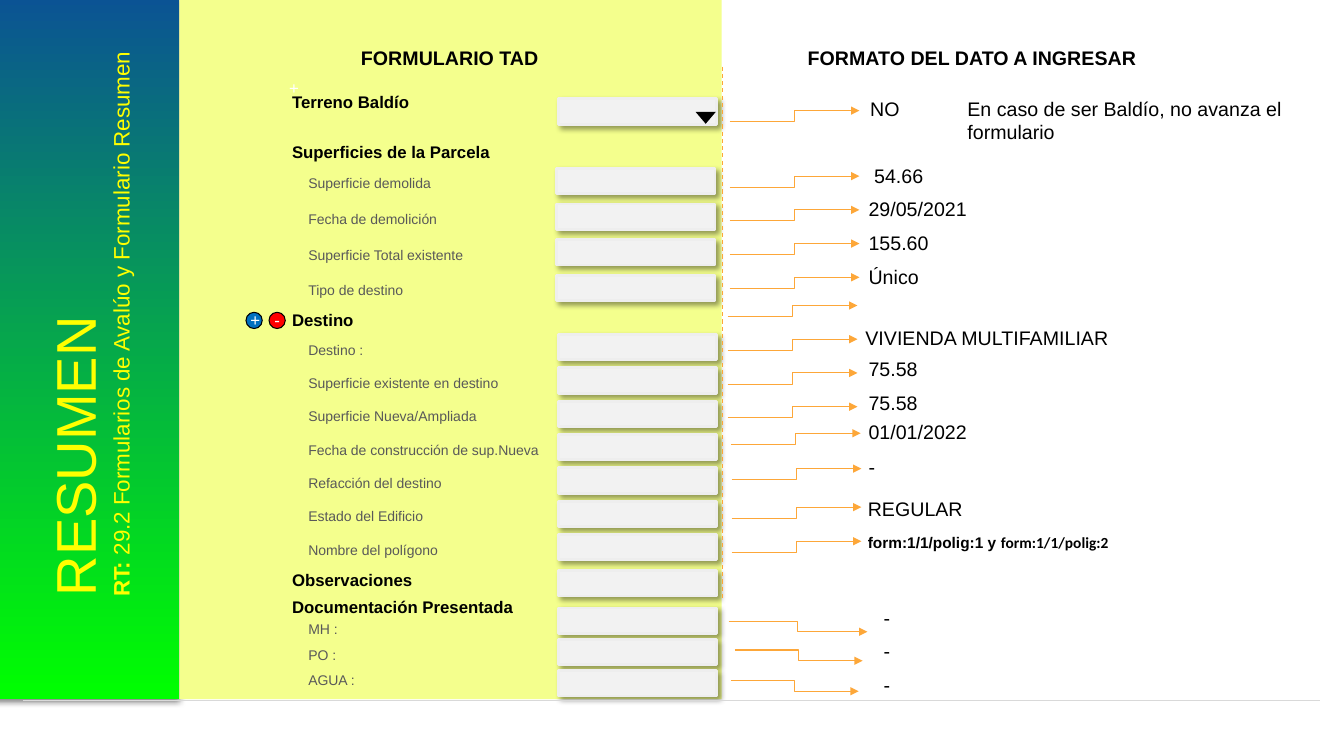
import pptx
import pptx.util
import pptx.dml.color
import pptx.enum.dml
import pptx.enum.shapes
import pptx.enum.text
import pptx.oxml
import pptx.oxml.ns

Cm, Pt = pptx.util.Cm, pptx.util.Pt
rgb = pptx.dml.color.RGBColor.from_string
qn = pptx.oxml.ns.qn
SHAPE = pptx.enum.shapes.MSO_SHAPE
LINE = pptx.enum.shapes.MSO_CONNECTOR
ALIGN = pptx.enum.text.PP_ALIGN
NS = pptx.oxml.ns.nsdecls("a")

prs = pptx.Presentation()
prs.slide_width, prs.slide_height = Cm(33.87), Cm(19.05)
s = prs.slides.add_slide(prs.slide_layouts[5])


def add_box(kind, x, y, w, h, fill, line=None, width=0.75, shadow=None):
    sp = s.shapes.add_shape(kind, Cm(x), Cm(y), Cm(w), Cm(h))
    sp.shadow.inherit = False
    sp.fill.solid()
    sp.fill.fore_color.rgb = rgb(fill)
    if line:
        sp.line.color.rgb = rgb(line)
        sp.line.width = Pt(width)
    else:
        sp.line.fill.background()
    if shadow:
        alpha, blur, dist, angle = shadow
        effects = sp.element.spPr.find(qn("a:effectLst"))
        effects.append(pptx.oxml.parse_xml(
            f'<a:outerShdw {NS} blurRad="{Pt(blur)}" dist="{Pt(dist)}" dir="{angle * 60000}" '
            f'algn="bl" rotWithShape="0"><a:srgbClr val="000000">'
            f'<a:alpha val="{alpha * 1000}"/></a:srgbClr></a:outerShdw>'))
    return sp


def add_text(text, x, y, w, h, size, color="000000", bold=False, align=ALIGN.LEFT):
    tf = s.shapes.add_textbox(Cm(x), Cm(y), Cm(w), Cm(h)).text_frame
    tf.word_wrap = True
    p = tf.paragraphs[0]
    p.text = text
    p.alignment = align
    p.font.name = "Arial"
    p.font.size = Pt(size)
    p.font.bold = bold
    p.font.color.rgb = rgb(color)
    return p


side = add_box(SHAPE.RECTANGLE, -0.13, -0.08, 4.65, 17.7, "0B5394", shadow=(50, 4.5, 1.5, 90))
side.fill.gradient()
side.fill.gradient_angle = 270
for stop, color in zip(side.fill.gradient_stops, ("0B5394", "00FF00")):
    stop.color.rgb = rgb(color)
add_box(SHAPE.RECTANGLE, 4.52, -0.08, 13.67, 17.7, "F4FF8D")

title = s.shapes.title
s.shapes.element.append(title.element)
title.left, title.top, title.width, title.height = Cm(-5), Cm(6.76), Cm(14.4), Cm(2.64)
title.rotation = 270
tf = title.text_frame
tf.word_wrap = True
tf.auto_size = pptx.enum.text.MSO_AUTO_SIZE.NONE
tf.vertical_anchor = pptx.enum.text.MSO_ANCHOR.TOP
tf.text = "RESUMEN\nRT: "
tf.paragraphs[1].runs[0].font.bold = True
tf.paragraphs[1].add_run().text = "29.2 Formularios de Avalúo y Formulario Resumen"
for p, size in zip(tf.paragraphs, (40, 16)):
    p.alignment = ALIGN.LEFT
    p.font.name = "Arial"
    p.font.size = Pt(size)
    p.font.color.rgb = rgb("FFFF00")

for text, x in (("FORMULARIO TAD", 6.32), ("FORMATO DEL DATO A INGRESAR", 19.48)):
    add_text(text, x, 1.04, 10.03, 0.86, 14, bold=True, align=ALIGN.CENTER)
add_text("+", 7.04, 1.83, 0.69, 0.76, 12, "FFFFFF")

for text, y in (
    ("Terreno Baldío", 2.18),
    ("Superficies de la Parcela", 3.45),
    ("Destino", 7.67),
    ("Observaciones", 14.22),
    ("Documentación Presentada", 14.91),
):
    add_text(text, 7.11, y, 6.4, 0.76, 12, bold=True)

parcela = ["Superficie demolida", "Fecha de demolición", "Superficie Total existente", "Tipo de destino"]
destino = [
    "Destino :", "Superficie existente en destino", "Superficie Nueva/Ampliada",
    "Fecha de construcción de sup.Nueva", "Refacción del destino",
    "Estado del Edificio", "Nombre del polígono",
]
documentos = ["MH :", "PO :", "AGUA :"]
for labels, x, field_y, field_step, label_y, label_step in (
    ([""], 14.07, 2.49, 0, 0, 0),
    (parcela, 14.03, 4.24, 0.9, 4.28, 0.9),
    (destino, 14.07, 8.43, 0.84, 8.47, 0.84),
    ([""], 14.07, 14.38, 0, 0, 0),
    (documentos, 14.07, 15.32, 0.79, 15.52, 0.64),
):
    for i, label in enumerate(labels):
        add_box(SHAPE.RECTANGLE, x, field_y + i * field_step, 3.99, 0.64,
                "F2F2F2", "EEEEEE", 2, (40, 4, 3, 45))
        if label:
            add_text(label, 7.52, label_y + i * label_step, 6.4, 0.69, 10, "595959")
add_box(SHAPE.FLOWCHART_MERGE, 17.53, 2.82, 0.51, 0.3, "000000")

for sign, x, color in (("+", 6.2, "0070C0"), ("-", 6.78, "FF0000")):
    add_box(SHAPE.OVAL, x, 7.87, 0.41, 0.41, color, "000000")
    add_text(sign, x - 0.14, 7.67, 0.69, 0.76, 12, "FFFFFF", align=ALIGN.CENTER)

lines = [
    (LINE.STRAIGHT, 0.58, 17.65, 33.27, 17.65, "D9D9D9"),
    (LINE.STRAIGHT, 18.21, 1.68, 18.21, 15.14, "FDA739"),
]
arrows = [(18.39, 3.07)]
arrows += [(18.39, 4.72 + 0.85 * i) for i in range(4)]
arrows += [(18.34, 7.98 + 0.85 * i) for i in range(4)]
arrows += [(18.42, 11.2), (18.44, 12.09), (18.44, 13.06), (18.44, 13.92)]
lines += [(LINE.ELBOW, x, y, x + 3.27, y - 0.28, "FDA739") for x, y in arrows]
lines += [
    (LINE.ELBOW, x, y, x + w, y + 0.27, "FDA739")
    for x, y, w in ((18.36, 15.65, 3.5), (18.52, 16.38, 3.22), (18.42, 17.15, 3.22))
]
for kind, x1, y1, x2, y2, color in lines:
    c = s.shapes.add_connector(kind, Cm(x1), Cm(y1), Cm(x2), Cm(y2))
    c.line.color.rgb = rgb(color)
    c.line.width = Pt(0.75)
    if x1 == x2:
        c.line.dash_style = pptx.enum.dml.MSO_LINE.DASH
    if kind == LINE.ELBOW:
        ln = c.element.spPr.find(qn("a:ln"))
        ln.append(pptx.oxml.parse_xml(f'<a:tailEnd {NS} type="triangle"/>'))
    c.element.spPr.append(pptx.oxml.parse_xml(f"<a:effectLst {NS}/>"))

for text, x, y in (
    ("NO", 21.68, 2.31),
    ("54.66", 21.78, 4.01),
    ("29/05/2021", 21.64, 4.85),
    ("155.60", 21.64, 5.69),
    ("Único", 21.64, 6.55),
    ("VIVIENDA MULTIFAMILIAR", 21.56, 8.1),
    ("75.58", 21.64, 8.86),
    ("75.58", 21.64, 9.73),
    ("01/01/2022", 21.64, 10.46),
    ("-", 21.64, 11.33),
    ("REGULAR", 21.62, 12.4),
    ("-", 22.02, 15.14),
    ("-", 22.02, 15.98),
    ("-", 22.02, 16.84),
):
    add_text(text, x, y, 7.2, 0.86, 14)
add_text("En caso de ser Baldío, no avanza el formulario", 24.13, 2.31, 8.94, 1.45, 14)

p = add_text("form:1/1/polig:1 y ", 21.62, 13.23, 9.93, 1.4, 11, bold=True)
p.line_spacing = 1.15
r = p.add_run()
r.text = "form:1/1/polig:2"
r.font.name = "Calibri"

prs.save("out.pptx")
